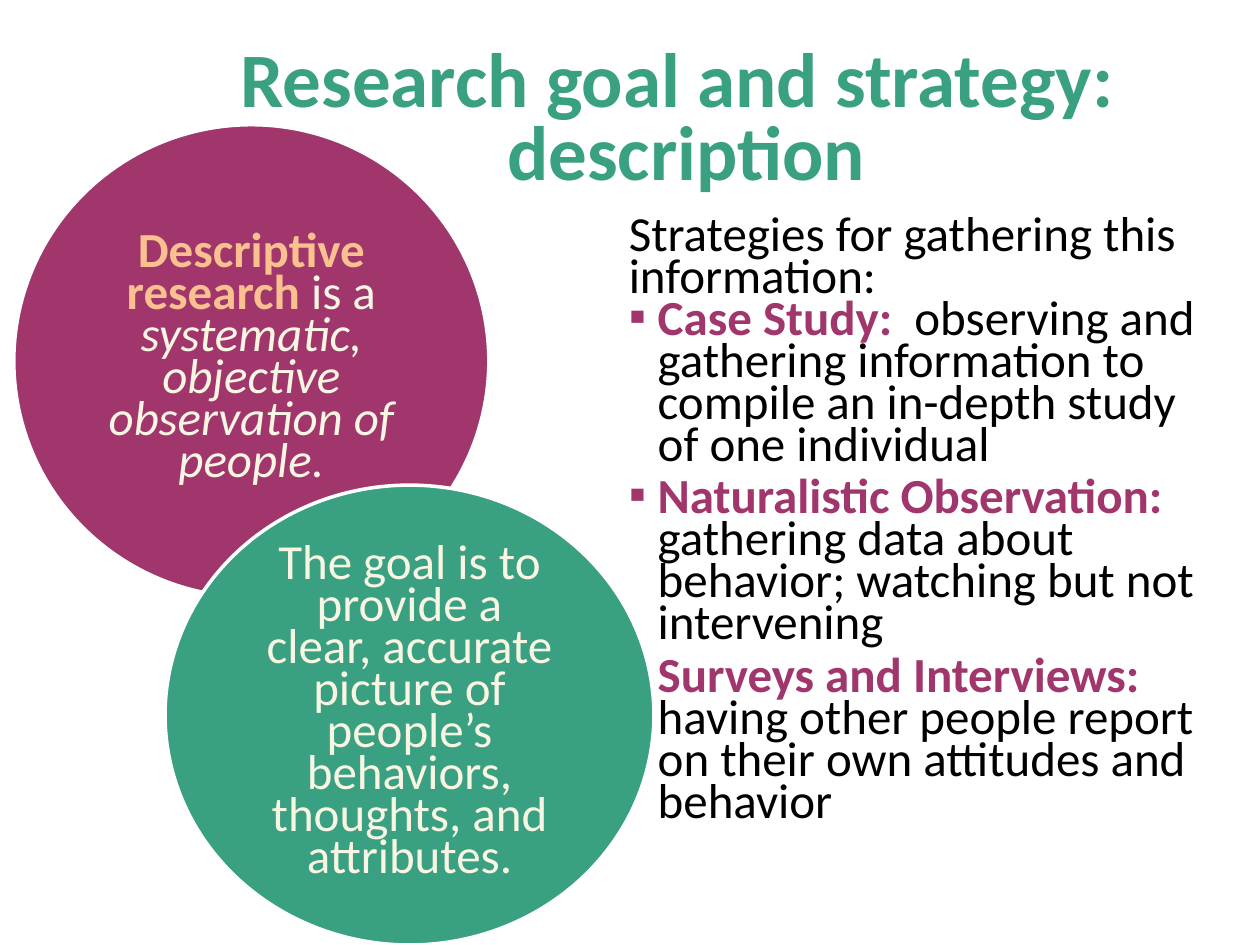
from lxml import etree
from pptx import Presentation
from pptx.dml.color import RGBColor
from pptx.enum import shapes, text
from pptx.oxml.ns import qn
from pptx.util import Inches, Pt

COLORS = {"green": "3AA082", "plum": "A0366C", "peach": "FAC090",
          "cream": "F8F6E3", "black": "000000", "white": "FFFFFF"}
FONT = "Calibri"

TITLE = "Research goal and strategy:\v description"
INTRO = "Strategies for gathering this information:"
STRATEGIES = [
    ("Case Study:  ", "observing and gathering information to compile an in-depth study of one individual"),
    ("Naturalistic Observation:  ", "gathering data about behavior; watching but not intervening"),
    ("Surveys and Interviews: ", "having other people report on their own attitudes and behavior"),
]
CIRCLES = [
    ((0.11, 0.99, 3.77, 3.75), "plum", [
        ("Descriptive research ", "peach", True, False),
        ("is a ", "cream", False, False),
        ("systematic, objective observation of people.", "cream", False, True)]),
    ((1.31, 3.85, 3.88, 3.65), "green", [
        ("The goal is to provide a clear, accurate picture of people’s behaviors, "
         "thoughts, and attributes.", "cream", False, False)]),
]


def rgb(name):
    return RGBColor.from_string(COLORS[name])


def style(r, color, size=28, bold=False, italic=False):
    f = r.font
    f.name, f.size, f.bold, f.italic = FONT, Pt(size), bold, italic
    f.color.rgb = rgb(color)


def place(sp, box):
    sp.left, sp.top, sp.width, sp.height = map(Inches, box)


def setup(tf, left=0.1, right=0.1, edge=0.05):
    tf.word_wrap = True
    tf.auto_size = text.MSO_AUTO_SIZE.NONE
    tf.vertical_anchor = text.MSO_ANCHOR.MIDDLE
    tf.margin_left, tf.margin_right = Inches(left), Inches(right)
    tf.margin_top = tf.margin_bottom = Inches(edge)


def fill_paragraph(p, runs, spacing=24, after=0):
    p.line_spacing, p.space_before, p.space_after = Pt(spacing), Pt(0), Pt(after)
    for words, color, bold, italic in runs:
        r = p.add_run()
        r.text = words
        style(r, color, bold=bold, italic=italic)


def set_bullet(p, char=None, indent=0.0):
    pPr = p._p.get_or_add_pPr()
    pPr.set("marL", str(Inches(indent)))
    pPr.set("indent", str(-Inches(indent)))
    if char:
        etree.SubElement(pPr, qn("a:buChar")).set("char", char)
    else:
        etree.SubElement(pPr, qn("a:buNone"))


prs = Presentation()
prs.slide_width, prs.slide_height = Inches(10), Inches(7.5)
s = prs.slides.add_slide(prs.slide_layouts[1])

title = s.shapes.title
place(title, (0.78, 0.5, 9, 0.95))
setup(title.text_frame, left=0.3)
title.text_frame.text = TITLE
p = title.text_frame.paragraphs[0]
p.alignment, p.line_spacing = text.PP_ALIGN.CENTER, Pt(42)
for r in p.runs:
    style(r, "green", 44, bold=True)

body = s.placeholders[1]
place(body, (4.89, 1.78, 4.91, 4.75))
tf = body.text_frame
setup(tf)
p = tf.paragraphs[0]
fill_paragraph(p, [(INTRO, "black", False, False)])
set_bullet(p)
for name, detail in STRATEGIES:
    p = tf.add_paragraph()
    fill_paragraph(p, [(name, "plum", True, False), (detail, "black", False, False)], after=6)
    set_bullet(p, "▪", 0.23)

for box, color, runs in CIRCLES:
    sp = s.shapes.add_shape(shapes.MSO_SHAPE.OVAL, *map(Inches, box))
    sp.shadow.inherit = False
    sp.fill.solid()
    sp.fill.fore_color.rgb = rgb(color)
    sp.line.color.rgb = rgb("white")
    sp.line.width = Pt(2)
    setup(sp.text_frame, 0.19, 0.19, 0)
    p = sp.text_frame.paragraphs[0]
    p.alignment = text.PP_ALIGN.CENTER
    fill_paragraph(p, runs)

prs.save("out.pptx")
